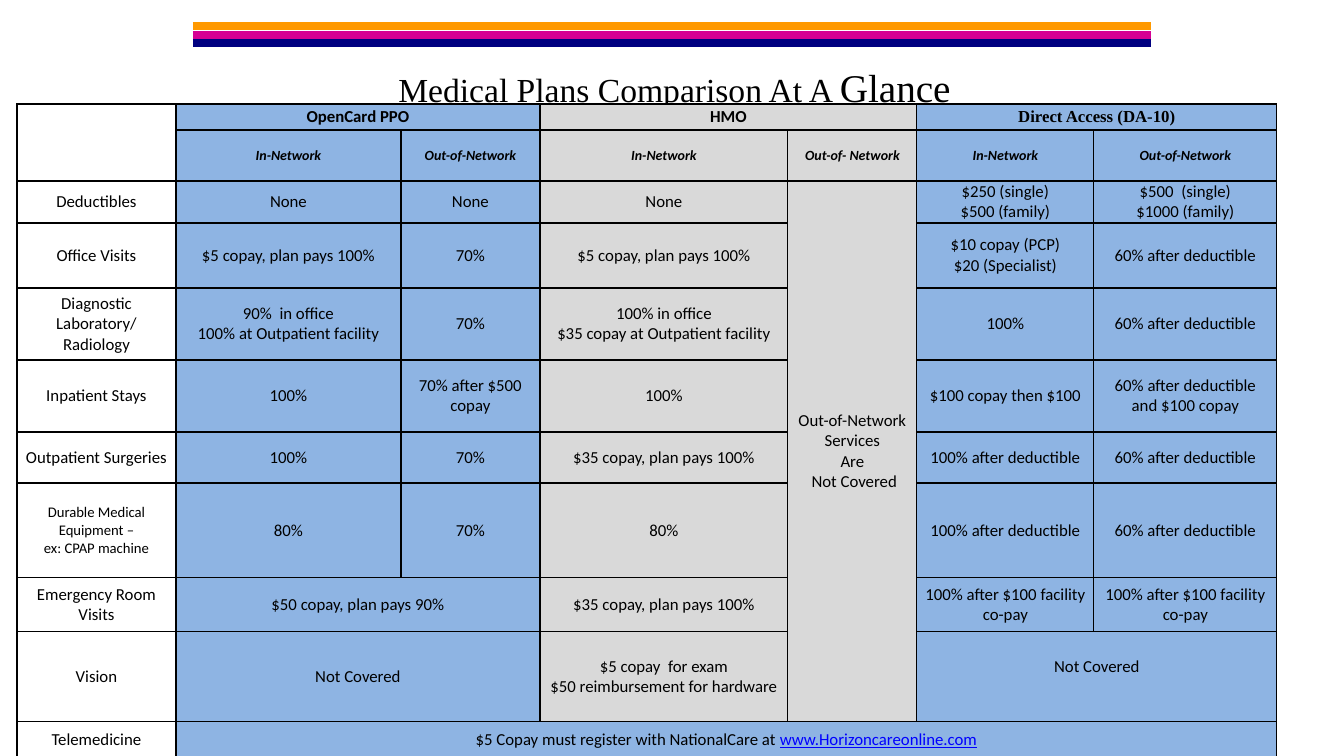
from lxml.etree import SubElement
from pptx import Presentation
from pptx.dml.color import RGBColor
from pptx.enum.shapes import MSO_CONNECTOR
from pptx.enum.text import MSO_ANCHOR, PP_ALIGN
from pptx.oxml.ns import qn
from pptx.util import Pt

BLACK = RGBColor(0x00, 0x00, 0x00)
BLUE = RGBColor(0x8E, 0xB4, 0xE3)
GREY = RGBColor(0xD9, 0xD9, 0xD9)
PINK = RGBColor(0xD6, 0x00, 0x93)
ORANGE = RGBColor(0xFF, 0x99, 0x00)
NAVY = RGBColor(0x00, 0x00, 0x80)
LINK = RGBColor(0x00, 0x00, 0xFF)
SCALE = 914400 / 100.8


def px(n):
    """Turn pixels into EMU."""
    return round(n * SCALE)


def style(run, size, face="Calibri", color=BLACK):
    run.font.size = Pt(size)
    run.font.name = face
    run.font.color.rgb = color


deck = Presentation()
deck.slide_width, deck.slide_height = px(1344), px(756)
slide = deck.slides.add_slide(deck.slide_layouts[6])
shapes = slide.shapes

# Stripes
for y, color in [(35, PINK), (26, ORANGE), (43, NAVY)]:
    stripe = shapes.add_connector(MSO_CONNECTOR.STRAIGHT, px(193), px(y), px(1151), px(y))
    stripe.line.color.rgb = color
    stripe.line.width = Pt(6)
    SubElement(stripe._element.spPr, qn("a:effectLst"))

# Title
frame = shapes.add_textbox(px(200), px(54), px(949), px(72)).text_frame
frame.word_wrap = True
frame.margin_top = px(9)
title = frame.paragraphs[0]
title.alignment = PP_ALIGN.CENTER
for text, size in [("Medical Plans Comparison At A ", 24), ("Glance", 28)]:
    run = title.add_run()
    run.text = text
    style(run, size, "Times New Roman")

# Plan table
WIDTHS = [159, 225, 139, 248, 129, 177, 183]
HEIGHTS = [26, 51, 42, 65, 72, 72, 51, 95, 54, 90, 36]
PAYS = "$5 copay, plan pays 100%"
PAYS35 = "$35 copay, plan pays 100%"
AFTER60 = "60% after deductible"
AFTER100 = "100% after deductible"
FACILITY = "100% after $100 facility co-pay"
ROWS = [
    ["", "OpenCard PPO", "", "HMO", "", "Direct Access (DA-10)", ""],
    ["", "In-Network", "Out-of-Network", "In-Network", "Out-of- Network",
     "In-Network", "Out-of-Network"],
    ["Deductibles", "None", "None", "None",
     "Out-of-Network Services\nAre\n Not Covered",
     "$250 (single)\n$500 (family)", "$500  (single)\n$1000 (family)"],
    ["Office Visits", PAYS, "70%", PAYS, "",
     "$10 copay (PCP)\n$20 (Specialist)", AFTER60],
    ["Diagnostic Laboratory/\nRadiology",
     "90%  in office\n100% at Outpatient facility", "70%",
     "100% in office\n$35 copay at Outpatient facility", "", "100%", AFTER60],
    ["Inpatient Stays", "100%", "70% after $500 copay", "100%", "",
     "$100 copay then $100", "60% after deductible and $100 copay"],
    ["Outpatient Surgeries", "100%", "70%", PAYS35, "", AFTER100, AFTER60],
    ["Durable Medical Equipment –\nex: CPAP machine", "80%", "70%", "80%", "",
     AFTER100, AFTER60],
    ["Emergency Room Visits", "$50 copay, plan pays 90%", "", PAYS35, "",
     FACILITY, FACILITY],
    ["Vision", "Not Covered", "",
     "$5 copay  for exam\n$50 reimbursement for hardware", "", "Not Covered", ""],
    ["Telemedicine", "$5 Copay must register with NationalCare at ",
     "", "", "", "", ""],
]
SPANS = [(0, 0, 1, 0), (0, 1, 0, 2), (0, 3, 0, 4), (0, 5, 0, 6), (2, 4, 9, 4),
         (8, 1, 8, 2), (9, 1, 9, 2), (9, 5, 9, 6), (10, 1, 10, 6)]
SIZES = {(1, c): 10 for c in range(7)} | {(7, 0): 10.5}

holder = shapes.add_table(len(ROWS), len(WIDTHS), px(17), px(104),
                          px(sum(WIDTHS)), px(sum(HEIGHTS)))
table = holder.table
table.first_row = table.horz_banding = False
for col, width in zip(table.columns, WIDTHS):
    col.width = px(width)
for row, height in zip(table.rows, HEIGHTS):
    row.height = px(height)

for r, row in enumerate(ROWS):
    for c, text in enumerate(row):
        cell = table.cell(r, c)
        cell.vertical_anchor = MSO_ANCHOR.MIDDLE
        cell.margin_left = cell.margin_right = px(7)
        cell.margin_top = cell.margin_bottom = 0
        props = cell._tc.get_or_add_tcPr()
        for side in ("lnL", "lnR", "lnT", "lnB"):
            edge = SubElement(props, qn("a:" + side), w=str(Pt(1)))
            paint = SubElement(edge, qn("a:solidFill"))
            SubElement(paint, qn("a:srgbClr"), val=str(BLACK))
        if c == 0:
            cell.fill.background()
        else:
            cell.fill.solid()
            cell.fill.fore_color.rgb = GREY if c in (3, 4) and r < 10 else BLUE
        cell.text_frame.text = text
        for para in cell.text_frame.paragraphs:
            para.alignment = PP_ALIGN.CENTER
            for run in para.runs:
                face = "Times New Roman" if (r, c) == (0, 5) else "Calibri"
                style(run, SIZES.get((r, c), 12), face)
                run.font.bold = r < 2
                run.font.italic = r == 1

for top, left, bottom, right in SPANS:
    table.cell(top, left).merge(table.cell(bottom, right))
table.cell(9, 5).margin_bottom = px(21)

site = table.cell(10, 1).text_frame.paragraphs[0].add_run()
site.text = "www.Horizoncareonline.com"
style(site, 12, color=LINK)
site.font.underline = True

deck.save("out.pptx")
